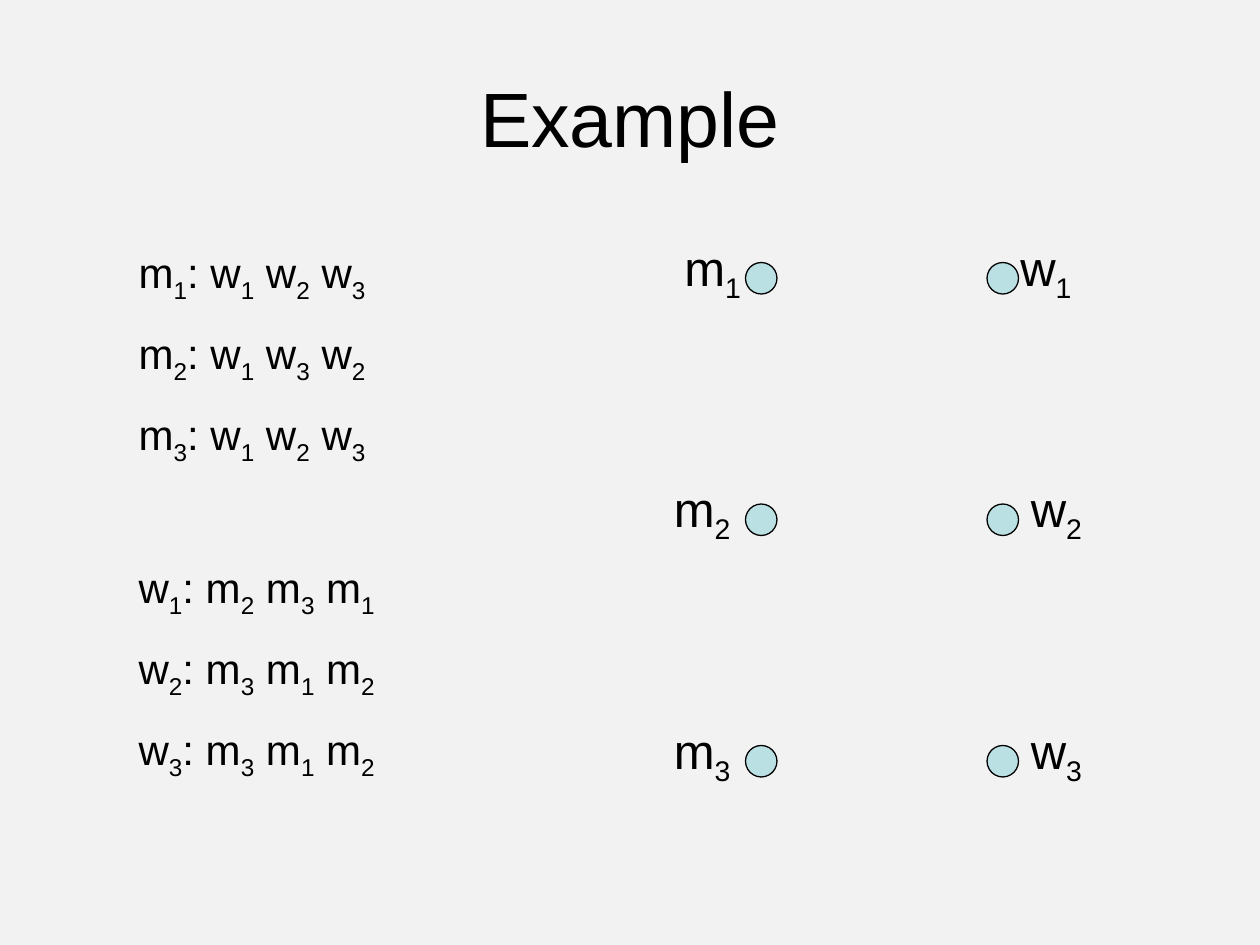
"""Build a slide with preference lists and an unconnected matching diagram."""
from itertools import groupby

from pptx import Presentation
from pptx.dml.color import RGBColor
from pptx.enum.shapes import MSO_SHAPE
from pptx.enum.text import MSO_ANCHOR, MSO_AUTO_SIZE, PP_ALIGN
from pptx.oxml.ns import qn
from pptx.util import Pt


def color(value):
    return RGBColor.from_string(value)


def apply_format(target, values):
    for name, value in values.items():
        setattr(target, name, value)


class SlideBuilder:
    ink = "000000"
    node_fill = "BBE0E3"
    background = "F2F2F2"
    font_name = "Arial"

    def __init__(self, presentation):
        self.slide = presentation.slides.add_slide(presentation.slide_layouts[1])
        fill = self.slide.background.fill
        fill.solid()
        fill.fore_color.rgb = color(self.background)

    def place(self, shape, left, top, width, height):
        apply_format(shape, {"left": Pt(left), "top": Pt(top),
                             "width": Pt(width), "height": Pt(height)})

    def add_text(self, paragraph, text, size):
        for is_index, letters in groupby(text, str.isdigit):
            run = paragraph.add_run()
            run.text = "".join(letters)
            apply_format(run.font, {"name": self.font_name, "size": Pt(size)})
            run.font.color.rgb = color(self.ink)
            if is_index:
                run.font._element.set("baseline", "-25000")

    def title(self, text, *box):
        shape = self.slide.shapes.title
        self.place(shape, *box)
        shape.text_frame.vertical_anchor = MSO_ANCHOR.MIDDLE
        paragraph = shape.text_frame.paragraphs[0]
        paragraph.alignment = PP_ALIGN.CENTER
        self.add_text(paragraph, text, 44)

    def preference_list(self, groups, *box):
        shape = self.slide.placeholders[1]
        self.place(shape, *box)
        frame = shape.text_frame
        apply_format(frame, {"auto_size": MSO_AUTO_SIZE.NONE, "word_wrap": True,
                             "vertical_anchor": MSO_ANCHOR.TOP})
        paragraph = frame.paragraphs[0]
        for group_index, group in enumerate(groups):
            for line_index, text in enumerate(group):
                if group_index or line_index:
                    paragraph = frame.add_paragraph()
                starts_group = group_index and not line_index
                paragraph.space_before = Pt(54.6 if starts_group else 13.5)
                properties = paragraph._p.get_or_add_pPr()
                properties.set("marL", "0")
                properties.set("indent", "0")
                properties.append(properties.makeelement(qn("a:buNone"), {}))
                self.add_text(paragraph, text, 24)

    def node(self, left, top, diameter=18):
        shape = self.slide.shapes.add_shape(
            MSO_SHAPE.OVAL, Pt(left), Pt(top), Pt(diameter), Pt(diameter))
        shape.shadow.inherit = False
        shape.fill.solid()
        shape.fill.fore_color.rgb = color(self.node_fill)
        shape.line.color.rgb = color(self.ink)
        shape.line.width = Pt(0.75)

    def label(self, text, left, top):
        shape = self.slide.shapes.add_textbox(Pt(left), Pt(top), Pt(54), Pt(41))
        frame = shape.text_frame
        apply_format(frame, {"word_wrap": True,
                             "auto_size": MSO_AUTO_SIZE.SHAPE_TO_FIT_TEXT})
        paragraph = frame.paragraphs[0]
        paragraph.space_before = Pt(14)
        self.add_text(paragraph, text, 28)


def main():
    presentation = Presentation()
    apply_format(presentation, {"slide_width": Pt(720), "slide_height": Pt(540)})
    builder = SlideBuilder(presentation)
    builder.title("Example", 36, 21.6, 648, 90)
    builder.preference_list([
        ["m1: w1 w2 w3", "m2: w1 w3 w2", "m3: w1 w2 w3"],
        ["w1: m2 m3 m1", "w2: m3 m1 m2", "w3: m3 m1 m2"],
    ], 72, 137.5, 216, 338)

    columns = [("m", 426, (384, 378, 378)), ("w", 564, (576, 582, 582))]
    for letter, node_left, label_lefts in columns:
        for row, label_left in enumerate(label_lefts):
            node_top = 150 + 138 * row
            builder.node(node_left, node_top)
            builder.label(f"{letter}{row + 1}", label_left, node_top - 18)
    presentation.save("out.pptx")


if __name__ == "__main__":
    main()
